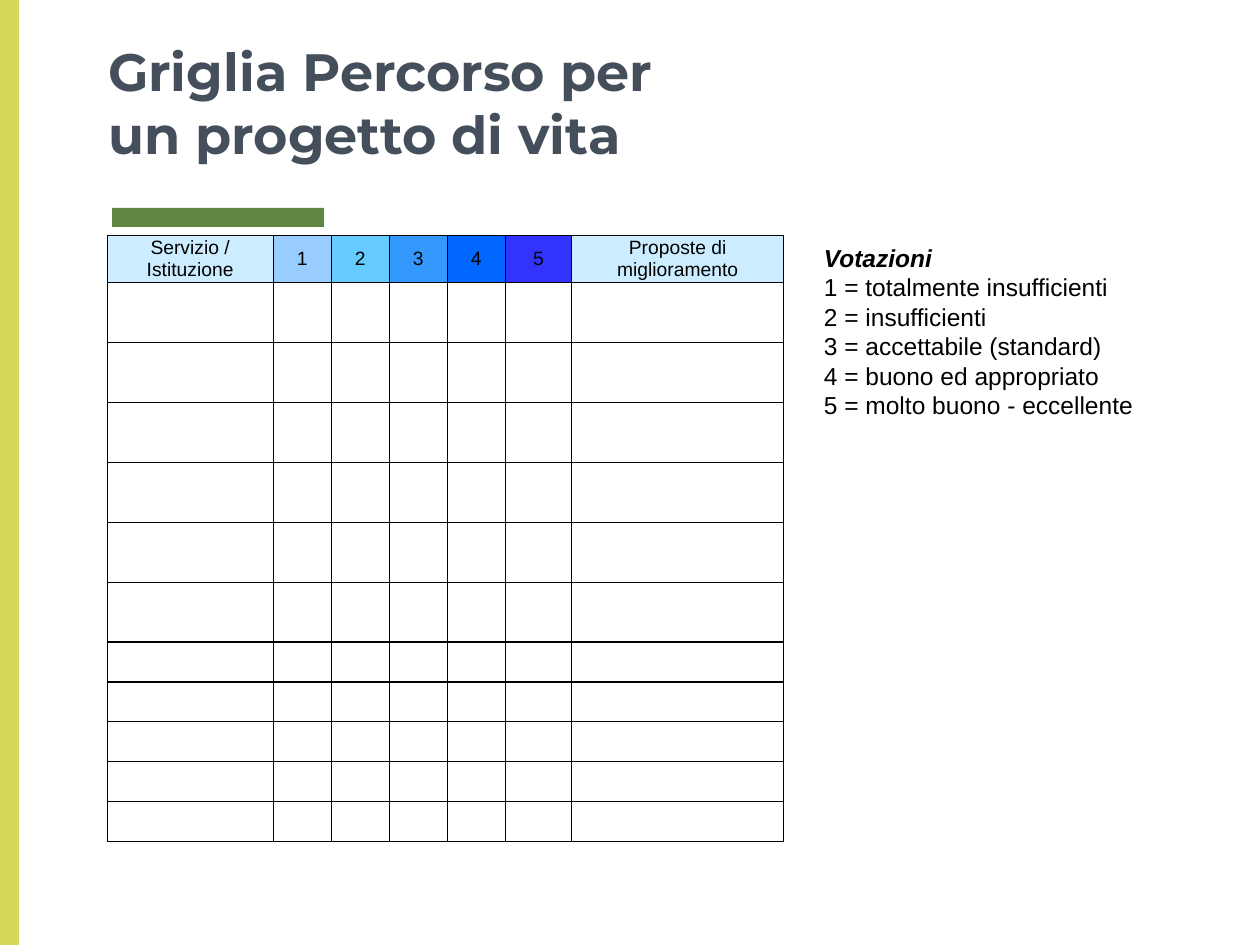
from dataclasses import dataclass
from typing import NamedTuple

from lxml.etree import SubElement
from pptx import Presentation
from pptx.dml.color import RGBColor
from pptx.enum.shapes import MSO_SHAPE
from pptx.enum.text import MSO_ANCHOR, PP_ALIGN
from pptx.oxml.ns import qn
from pptx.util import Inches, Pt


@dataclass(frozen=True)
class Theme:
    heading_font: str = "Montserrat"
    body_font: str = "Arial"
    title_size: int = 30
    legend_size: int = 14
    grid_size: int = 11
    heading: str = "454F5B"
    ink: str = "000000"
    side_band: str = "D5D85A"
    accent: str = "608643"
    border_width: float = 0.75


class Box(NamedTuple):
    left: float
    top: float
    width: float
    height: float

    def emu(self) -> list[int]:
        return [Inches(length) for length in self]


class Column(NamedTuple):
    heading: str
    width: float
    fill: str


THEME = Theme()
SLIDE_WIDTH, SLIDE_HEIGHT = 10, 7.5

COLUMNS = [
    Column("Servizio /\nIstituzione", 1.32, "CCECFF"),
    Column("1", 0.46, "99CCFF"),
    Column("2", 0.46, "66CCFF"),
    Column("3", 0.46, "3399FF"),
    Column("4", 0.46, "0066FF"),
    Column("5", 0.53, "3333FF"),
    Column("Proposte di miglioramento", 1.68, "CCECFF"),
]
ROW_HEIGHTS = [0.37] + [0.476] * 6 + [0.317] * 5
RATINGS = [
    "Votazioni",
    "1 = totalmente insufficienti",
    "2 = insufficienti",
    "3 = accettabile (standard)",
    "4 = buono ed appropriato",
    "5 = molto buono - eccellente",
]


def style_runs(paragraph, font_name: str, size: int, color: str,
               bold: bool = False, italic: bool = False) -> None:
    for run in paragraph.runs:
        run.font.name = font_name
        run.font.size = Pt(size)
        run.font.bold = bold
        run.font.italic = italic
        run.font.color.rgb = RGBColor.from_string(color)


def add_bar(slide, box: Box, color: str) -> None:
    bar = slide.shapes.add_shape(MSO_SHAPE.RECTANGLE, *box.emu())
    bar.shadow.inherit = False
    bar.fill.solid()
    bar.fill.fore_color.rgb = RGBColor.from_string(color)
    bar.line.fill.background()


def add_text(slide, box: Box, text: str):
    frame = slide.shapes.add_textbox(*box.emu()).text_frame
    frame.word_wrap = True
    frame.text = text
    return frame


def outline_cell(cell) -> None:
    properties = cell._tc.get_or_add_tcPr()
    for position, side in enumerate(("a:lnL", "a:lnR", "a:lnT", "a:lnB")):
        line = SubElement(properties, qn(side), w=str(Pt(THEME.border_width)))
        fill = SubElement(line, qn("a:solidFill"))
        SubElement(fill, qn("a:srgbClr"), val=THEME.ink)
        properties.insert(position, line)  # borders come before the fill


def fill_cell(cell, text: str, color: str | None) -> None:
    cell.margin_left = cell.margin_right = Inches(0.06)
    cell.margin_top = cell.margin_bottom = 0
    cell.vertical_anchor = MSO_ANCHOR.MIDDLE
    if color:
        cell.fill.solid()
        cell.fill.fore_color.rgb = RGBColor.from_string(color)
    else:
        cell.fill.background()
    outline_cell(cell)
    cell.text_frame.text = text
    for paragraph in cell.text_frame.paragraphs:
        paragraph.alignment = PP_ALIGN.CENTER
        style_runs(paragraph, THEME.body_font, THEME.grid_size, THEME.ink)
        if not text:  # keeps empty rows from growing
            SubElement(paragraph._p, qn("a:endParaRPr"), sz=str(THEME.grid_size * 100))


def add_rating_grid(slide, left: float, top: float) -> None:
    box = Box(left, top, sum(c.width for c in COLUMNS), sum(ROW_HEIGHTS))
    grid = slide.shapes.add_table(len(ROW_HEIGHTS), len(COLUMNS), *box.emu()).table
    grid.first_row = grid.horz_banding = False
    for row, height in zip(grid.rows, ROW_HEIGHTS):
        row.height = Inches(height)
    for index, column in enumerate(COLUMNS):
        grid.columns[index].width = Inches(column.width)
        fill_cell(grid.cell(0, index), column.heading, column.fill)
        for row_index in range(1, len(ROW_HEIGHTS)):
            fill_cell(grid.cell(row_index, index), "", None)


def main() -> None:
    deck = Presentation()
    deck.slide_width, deck.slide_height = Inches(SLIDE_WIDTH), Inches(SLIDE_HEIGHT)
    slide = deck.slides.add_slide(deck.slide_layouts[6])

    # Side band and title accent
    add_bar(slide, Box(0.89, 1.65, 1.68, 0.15), THEME.accent)
    add_bar(slide, Box(0, 0, 0.15, SLIDE_HEIGHT), THEME.side_band)

    # Title
    title = add_text(slide, Box(0.76, 0, 8.49, 1.41),
                     "Griglia Percorso per\vun progetto di vita")
    title.vertical_anchor = MSO_ANCHOR.BOTTOM
    title.margin_left = title.margin_right = Inches(0.1)
    title.margin_top = title.margin_bottom = Inches(0.1)
    style_runs(title.paragraphs[0], THEME.heading_font, THEME.title_size,
               THEME.heading, bold=True)

    # Rating grid
    add_rating_grid(slide, 0.85, 1.87)

    # Legend of the ratings
    legend = add_text(slide, Box(6.44, 1.88, 2.71, 1.51), "\n".join(RATINGS))
    for index, paragraph in enumerate(legend.paragraphs):
        is_heading = index == 0
        style_runs(paragraph, THEME.body_font, THEME.legend_size, THEME.ink,
                   bold=is_heading, italic=is_heading)

    deck.save("out.pptx")


if __name__ == "__main__":
    main()
